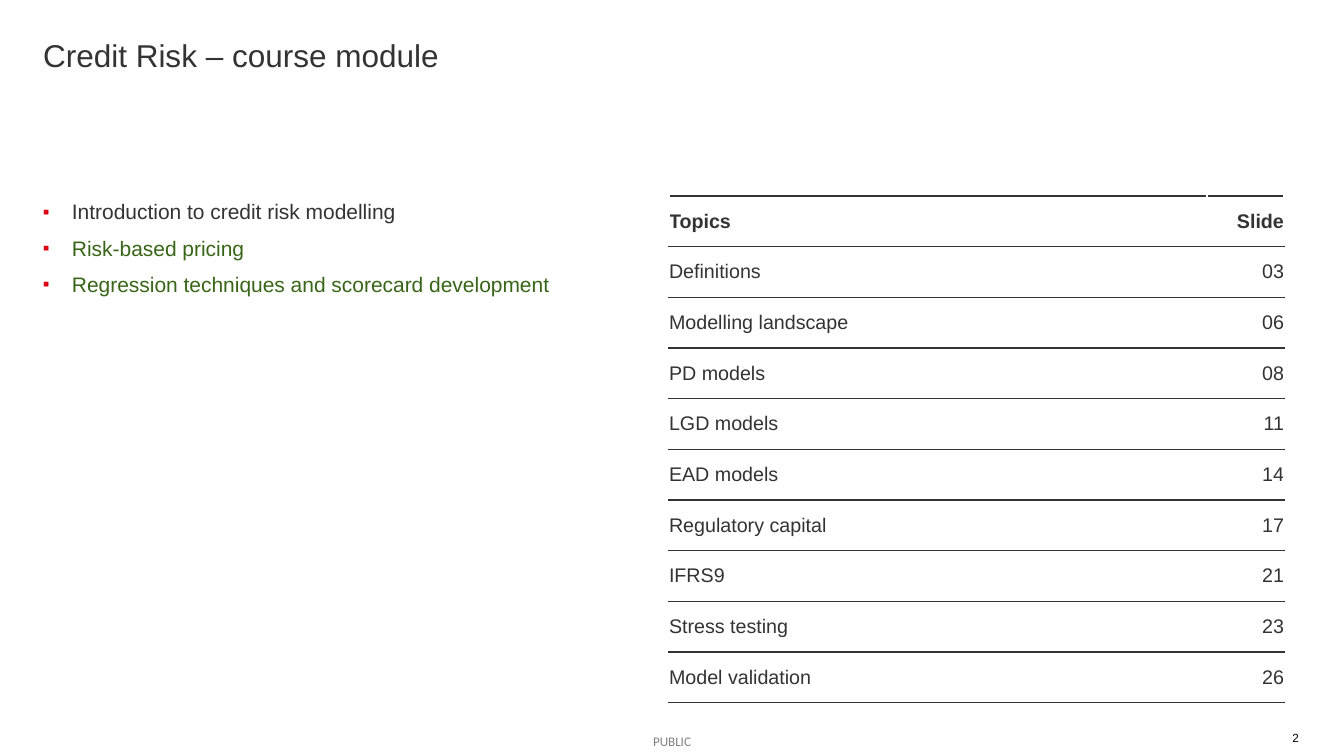
from lxml.etree import SubElement
from pptx import Presentation
from pptx.dml.color import RGBColor
from pptx.enum.text import MSO_ANCHOR as Anchor, PP_ALIGN as Align
from pptx.oxml.ns import qn
from pptx.util import Pt

TITLE = "Credit Risk – course module"
FOOTER = "PUBLIC"
NUMBER = "2"
COLORS = {"ink": "333333", "green": "386517", "red": "DB0011",
          "black": "000000", "white": "FFFFFF"}
MODULES = [
    ("Introduction to credit risk modelling", "ink"),
    ("Risk-based pricing", "green"),
    ("Regression techniques and scorecard development", "green"),
]
TOPICS = [
    ("Topics", "Slide"),
    ("Definitions", "03"),
    ("Modelling landscape", "06"),
    ("PD models", "08"),
    ("LGD models", "11"),
    ("EAD models", "14"),
    ("Regulatory capital", "17"),
    ("IFRS9", "21"),
    ("Stress testing", "23"),
    ("Model validation", "26"),
]
COLS = (538, 77)
TABLE_H = 507
BORDERS = (("L", "white"), ("R", "white"), ("T", "ink"), ("B", "ink"))


def px(n):
    return round(n * 914400 / 94.5)


def style(par, size, color="ink", font="Arial", bold=False, align=Align.LEFT):
    par.alignment = align
    for run in par.runs:
        face = run.font
        face.name, face.size, face.bold = font, Pt(size), bold
        face.color.rgb = RGBColor.from_string(COLORS[color])


def add_text(slide, box, lines):
    """Add a text box without insets and return its frame."""
    frame = slide.shapes.add_textbox(*map(px, box)).text_frame
    frame.margin_left = frame.margin_right = 0
    frame.margin_top = frame.margin_bottom = 0
    frame.word_wrap = True
    frame.text = "\n".join(lines)
    return frame


def add_bullet(par):
    props = par._p.get_or_add_pPr()
    props.set("marL", str(px(29)))
    props.set("indent", str(px(-29)))
    tint = SubElement(props, qn("a:buClr"))
    SubElement(tint, qn("a:srgbClr"), val=COLORS["red"])
    SubElement(props, qn("a:buSzPct"), val="90000")
    SubElement(props, qn("a:buFont"), typeface="Arial")
    SubElement(props, qn("a:buChar"), char="▪")


def add_borders(cell):
    """Draw the cell's four sides; call before setting its fill."""
    props = cell._tc.get_or_add_tcPr()
    for side, color in BORDERS:
        line = SubElement(props, qn(f"a:ln{side}"), w=str(Pt(1)))
        fill = SubElement(line, qn("a:solidFill"))
        SubElement(fill, qn("a:srgbClr"), val=COLORS[color])


def add_modules(slide):
    frame = add_text(slide, (43, 196, 590, 466), [text for text, _ in MODULES])
    for i, (par, (_, color)) in enumerate(zip(frame.paragraphs, MODULES)):
        add_bullet(par)
        par.line_spacing = 1.12
        par.space_before = Pt(6 if i else 0)
        style(par, 16, color)


def add_topics(slide):
    frame = slide.shapes.add_table(len(TOPICS), len(COLS), px(669), px(196),
                                   px(sum(COLS)), px(TABLE_H))
    table = frame.table
    table.first_row = table.horz_banding = False
    for col, width in zip(table.columns, COLS):
        col.width = px(width)
    for r, row in enumerate(TOPICS):
        table.rows[r].height = px(TABLE_H / len(TOPICS))
        for c, text in enumerate(row):
            cell = table.cell(r, c)
            cell.text = text
            cell.margin_left = cell.margin_right = 0
            cell.margin_top = cell.margin_bottom = px(8)
            cell.vertical_anchor = Anchor.MIDDLE
            add_borders(cell)
            cell.fill.background()
            style(cell.text_frame.paragraphs[0], 15, bold=r == 0,
                  align=Align.RIGHT if c else Align.LEFT)


def add_footer(slide):
    label = add_text(slide, (653, 733, 42, 16), [FOOTER])
    label.word_wrap = False
    style(label.paragraphs[0], 10, "black", "Calibri")
    for color in label._txBody.iter(qn("a:srgbClr")):
        SubElement(color, qn("a:alpha"), val="50000")
    number = add_text(slide, (1275, 731, 39, 14), [NUMBER])
    number.vertical_anchor = Anchor.MIDDLE
    # The digit ends at the right edge of its box.
    style(number.paragraphs[0], 9, "black", align=Align.RIGHT)
    number.margin_right = px(15)


def main():
    deck = Presentation()
    deck.slide_width, deck.slide_height = px(1344), px(756)
    slide = deck.slides.add_slide(deck.slide_layouts[6])
    title = add_text(slide, (43, 43, 1258, 37), [TITLE]).paragraphs[0]
    title.line_spacing = 0.8
    style(title, 24)
    add_modules(slide)
    add_topics(slide)
    add_footer(slide)
    deck.save("out.pptx")


if __name__ == "__main__":
    main()
